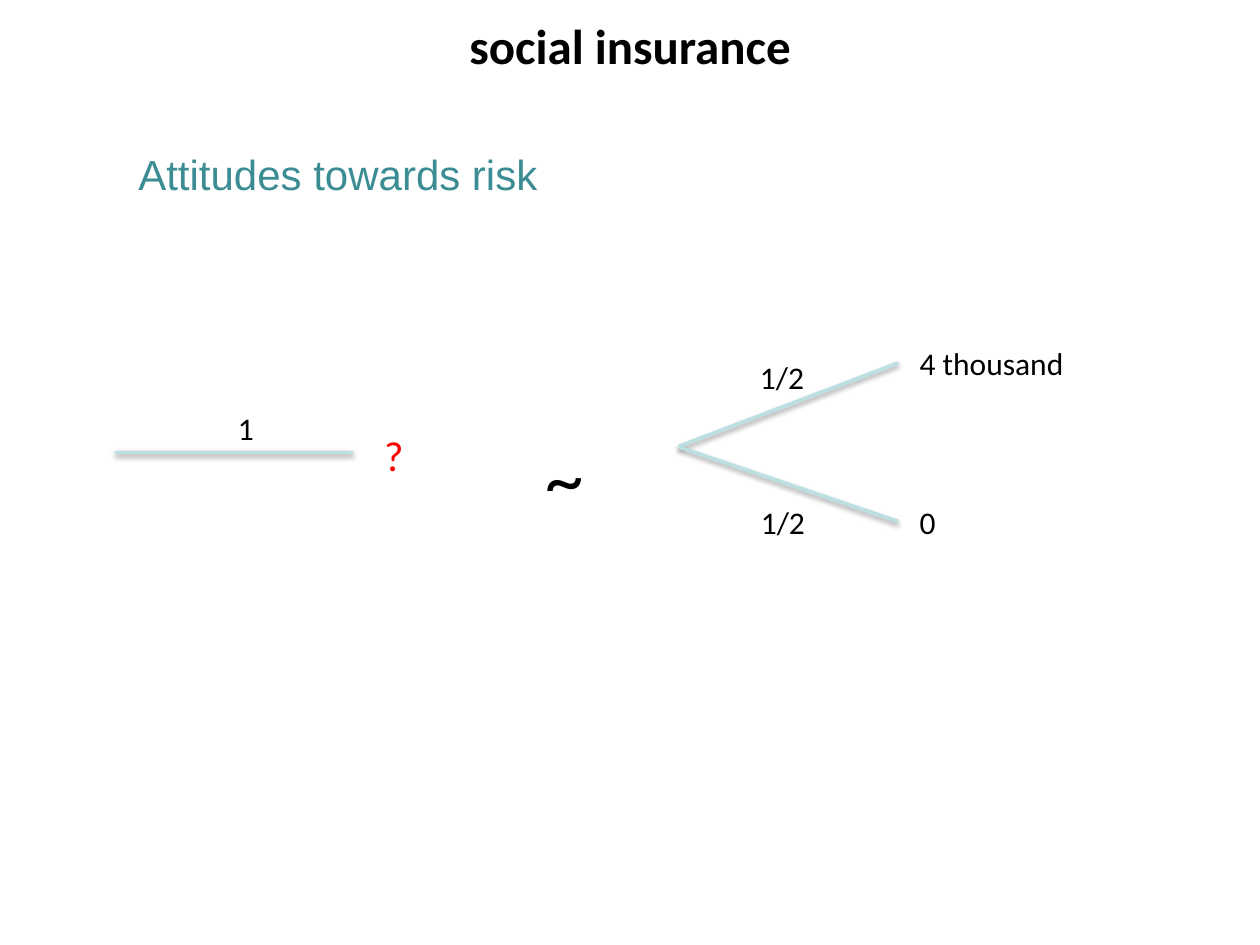
"""Build the social insurance slide comparing a sure payoff with a lottery."""
from typing import NamedTuple

from lxml import etree
from pptx import Presentation
from pptx.dml.color import RGBColor
from pptx.enum.shapes import MSO_CONNECTOR
from pptx.enum.text import MSO_ANCHOR, MSO_AUTO_SIZE, PP_ALIGN
from pptx.util import Pt

STRAIGHT = MSO_CONNECTOR.STRAIGHT
TOP = MSO_ANCHOR.TOP
CENTER = PP_ALIGN.CENTER
FIT_SHAPE = MSO_AUTO_SIZE.SHAPE_TO_FIT_TEXT
NO_FIT = MSO_AUTO_SIZE.NONE

BLACK = "000000"
RED = "FF0000"
TEAL = "3C8C93"
PALE_BLUE = "BBE0E3"
SHADOW = (
    '<a:effectLst xmlns:a="http://schemas.openxmlformats.org/drawingml/2006/main">'
    '<a:outerShdw blurRad="40000" dist="20000" dir="5400000" rotWithShape="0">'
    '<a:srgbClr val="000000"><a:alpha val="38000"/></a:srgbClr>'
    "</a:outerShdw></a:effectLst>"
)


class Branch(NamedTuple):
    x1: float
    y1: float
    x2: float
    y2: float


class Label(NamedTuple):
    text: str
    left: float
    top: float
    width: float
    height: float = 29
    size: float = 18
    color: str = BLACK
    font: str = "Calibri"
    wrap: bool = False
    fit: MSO_AUTO_SIZE = FIT_SHAPE
    space: float = 0


BRANCHES = [
    Branch(65.5, 258.5, 201.6, 258.5),
    Branch(388, 255, 513.4, 207.4),
    Branch(388, 255.5, 513.4, 298),
]
LABELS = [
    Label("?", 212.4, 242, 58.3, 36, size=24, color=RED, wrap=True),
    Label("1", 128.9, 230.4, 23.8),
    Label("4 thousand", 518.4, 193, 98),
    Label("0", 518.4, 283.7, 23.8),
    Label("1/2", 427.2, 200.9, 40.3),
    Label("1/2", 427.7, 283.7, 40.3),
    Label("~", 304.6, 242, 49.7, 60.5, size=44, wrap=True),
    Label("Attitudes towards risk", 72, 81.4, 576, 38.9, size=24, color=TEAL,
          font="Arial", wrap=True, fit=NO_FIT, space=2.4),
]


def rgb(value: str) -> RGBColor:
    return RGBColor.from_string(value)


def style_font(p, name: str, size: float, color: str, bold: bool = False) -> None:
    p.font.name = name
    p.font.size = Pt(size)
    p.font.bold = bold
    p.font.color.rgb = rgb(color)


def draw_title(slide, text: str) -> None:
    sp = slide.shapes.title
    sp.left, sp.top, sp.width, sp.height = Pt(36), Pt(8.6), Pt(648), Pt(93.6)
    tf = sp.text_frame
    tf.text = text
    tf.auto_size = NO_FIT
    tf.vertical_anchor = TOP
    tf.margin_top = 0
    p = tf.paragraphs[0]
    p.alignment = CENTER
    style_font(p, "Calibri", 28, BLACK, bold=True)


def draw_branch(slide, branch: Branch) -> None:
    line = slide.shapes.add_connector(STRAIGHT, *map(Pt, branch))
    line.line.color.rgb = rgb(PALE_BLUE)
    line.line.width = Pt(2)
    line._element.spPr.append(etree.fromstring(SHADOW))


def draw_label(slide, label: Label) -> None:
    box = (label.left, label.top, label.width, label.height)
    tf = slide.shapes.add_textbox(*map(Pt, box)).text_frame
    tf.text = label.text
    tf.word_wrap = label.wrap
    tf.auto_size = label.fit
    p = tf.paragraphs[0]
    p.space_before = p.space_after = Pt(label.space)
    style_font(p, label.font, label.size, label.color)


def main() -> None:
    prs = Presentation()
    prs.slide_width, prs.slide_height = Pt(720), Pt(540)
    slide = prs.slides.add_slide(prs.slide_layouts[5])
    draw_title(slide, "social insurance")
    for branch in BRANCHES:
        draw_branch(slide, branch)
    for label in LABELS:
        draw_label(slide, label)
    prs.save("out.pptx")


if __name__ == "__main__":
    main()
